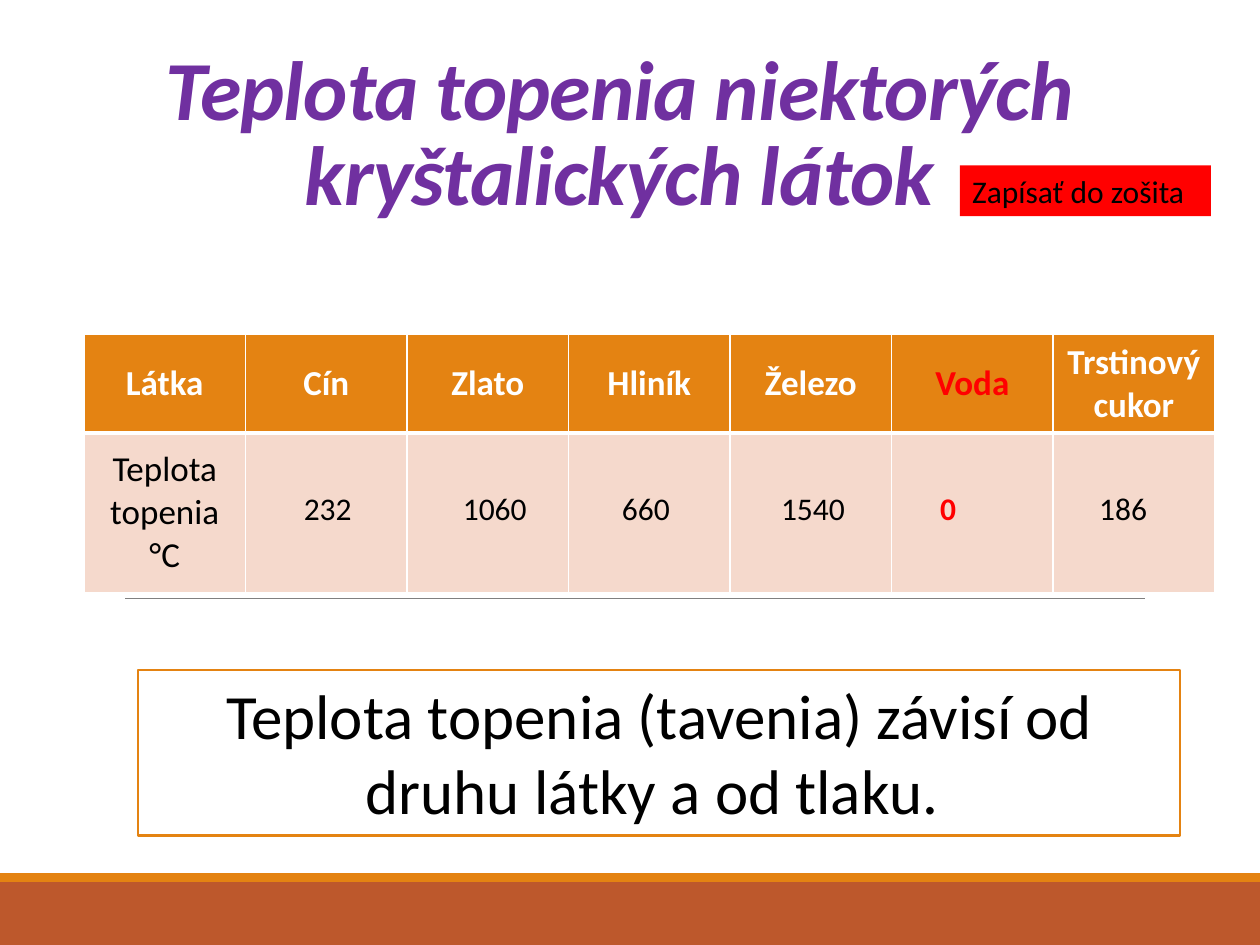
from lxml import etree
from pptx import Presentation
from pptx.dml.color import RGBColor
from pptx.enum.shapes import MSO_CONNECTOR, MSO_SHAPE
from pptx.enum.text import MSO_ANCHOR, PP_ALIGN
from pptx.oxml.ns import qn
from pptx.util import Pt

RECT = MSO_SHAPE.RECTANGLE
LINE = MSO_CONNECTOR.STRAIGHT
LEFT, CENTER = PP_ALIGN.LEFT, PP_ALIGN.CENTER
MIDDLE, BOTTOM, TOP = MSO_ANCHOR.MIDDLE, MSO_ANCHOR.BOTTOM, MSO_ANCHOR.TOP
HEX = {
    "orange": "E48312", "rust": "BD582C", "blush": "F5D9CC", "grey": "808080",
    "purple": "7030A0", "red": "FF0000", "white": "FFFFFF", "black": "000000",
}
RGB = {name: RGBColor.from_string(code) for name, code in HEX.items()}


def write(frame, text, size, color="black", bold=False, align=LEFT, anchor=TOP):
    frame.word_wrap = True
    frame.vertical_anchor = anchor
    para = frame.paragraphs[0]
    para.alignment = align
    run = para.add_run()
    run.text = text
    font = run.font
    font.name = "Calibri"
    font.size = Pt(size)
    font.bold = bold
    font.color.rgb = RGB[color]
    return para, run


def add_box(x, y, w, h, fill, edge=None):
    box = shapes.add_shape(RECT, Pt(x), Pt(y), Pt(w), Pt(h))
    box.shadow.inherit = False
    box.fill.solid()
    box.fill.fore_color.rgb = RGB[fill]
    if edge:
        box.line.color.rgb = RGB[edge]
        box.line.width = Pt(1.25)
    else:
        box.line.fill.background()
    return box


deck = Presentation()
deck.slide_width = Pt(720)
deck.slide_height = Pt(540)
slide = deck.slides.add_slide(deck.slide_layouts[6])
shapes = slide.shapes

add_box(0, 504, 720, 36, "rust")
add_box(0, 499, 720, 5, "orange")
rule = shapes.add_connector(LINE, Pt(71.5), Pt(342), Pt(654.5), Pt(342))
rule.line.color.rgb = RGB["grey"]
rule.line.width = Pt(0.5)
etree.SubElement(rule._element.spPr, qn("a:effectLst"))

title = shapes.add_textbox(Pt(48), Pt(15), Pt(612), Pt(116))
para, run = write(title.text_frame, "Teplota topenia niektorých kryštalických látok",
                  48, "purple", True, CENTER, BOTTOM)
para.line_spacing = 0.85
run.font.italic = True
run._r.get_or_add_rPr().set("spc", "-50")

claim = add_box(79, 383, 595.5, 94.5, "white", "orange")
write(claim.text_frame, "Teplota topenia (tavenia) závisí od druhu látky a od tlaku. ",
      36, align=CENTER)

heads = ["Látka", "Cín", "Zlato", "Hliník", "Železo", "Voda", "Trstinový cukor"]
sides = ["a:lnL", "a:lnR", "a:lnT", "a:lnB"]
table = shapes.add_table(2, len(heads), Pt(48), Pt(191), Pt(646.1), Pt(147.5)).table
for col in table.columns:
    col.width = Pt(92.3)
table.rows[0].height = Pt(56.5)
table.rows[1].height = Pt(91)
for i, head in enumerate(heads):
    color = "red" if head == "Voda" else "white"
    write(table.cell(0, i).text_frame, head, 20, color, True, CENTER)
write(table.cell(1, 0).text_frame, "Teplota topenia °C", 20, align=CENTER)

for r, row in enumerate(table.rows):
    for cell in row.cells:
        cell.vertical_anchor = MIDDLE
        cell.fill.solid()
        cell.fill.fore_color.rgb = RGB["blush" if r else "orange"]
        props = cell._tc.get_or_add_tcPr()
        widths = [1, 1, 3, 1] if r else [1, 1, 1, 3]
        for i, (side, wide) in enumerate(zip(sides, widths)):
            edge = etree.Element(qn(side), w=str(Pt(wide)))
            fill = etree.SubElement(edge, qn("a:solidFill"))
            etree.SubElement(fill, qn("a:srgbClr"), val=HEX["white"])
            props.insert(i, edge)

for i, temp in enumerate(["232", "1060", "660", "1540", "0", "186"]):
    label = shapes.add_textbox(Pt(166.5 + 90.9 * i), Pt(276), Pt(57), Pt(29))
    zero = temp == "0"
    write(label.text_frame, temp, 18, "red" if zero else "black", zero)

note = add_box(548.5, 94.5, 143.5, 29, "red")
write(note.text_frame, "Zapísať do zošita", 18)

deck.save("out.pptx")
